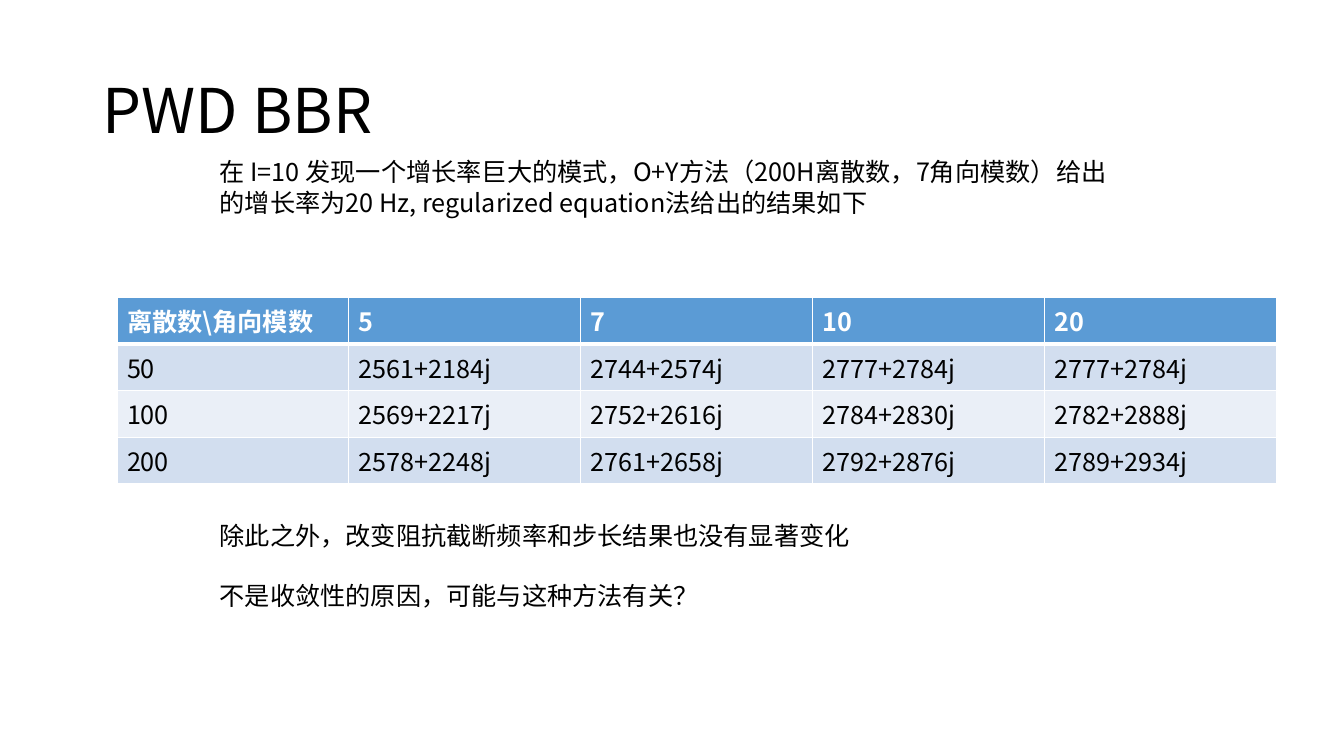
import pptx
import pptx.util
import pptx.dml.color
import pptx.enum.text
import pptx.oxml
import pptx.oxml.ns

Inches, Pt = pptx.util.Inches, pptx.util.Pt
COLORS = {"text": "000000", "light": "FFFFFF", "header": "5B9BD5",
          "odd": "D2DEEF", "even": "EAEFF7"}
FONT = "Noto Sans CJK SC"
GROWTH_RATES = [
    ["离散数\\角向模数", "5", "7", "10", "20"],
    ["50", "2561+2184j", "2744+2574j", "2777+2784j", "2777+2784j"],
    ["100", "2569+2217j", "2752+2616j", "2784+2830j", "2782+2888j"],
    ["200", "2578+2248j", "2761+2658j", "2792+2876j", "2789+2934j"],
]


def rgb(name):
    return pptx.dml.color.RGBColor.from_string(COLORS[name])


class SlideBuilder:
    """Holds the text style and the current page, and adds elements to it."""

    def __init__(self, page):
        self.page = page
        self.style = {"name": FONT, "size": Pt(18), "bold": False}

    def add_span(self, para, text, color="text", **changes):
        span = para.add_run()
        span.text = text
        for key, value in {**self.style, **changes}.items():
            setattr(span.font, key, value)
        span.font.color.rgb = rgb(color)
        east_asian = pptx.oxml.parse_xml(
            f'<a:ea {pptx.oxml.ns.nsdecls("a")} typeface="{FONT}"/>')
        span.font._element.find(pptx.oxml.ns.qn("a:latin")).addnext(east_asian)

    def place(self, shape, *bounds):
        for key, value in zip(("left", "top", "width", "height"), bounds):
            setattr(shape, key, Inches(value))

    def title(self, text, *bounds):
        box = self.page.shapes.title
        self.place(box, *bounds)
        frame = box.text_frame
        frame.auto_size = pptx.enum.text.MSO_AUTO_SIZE.NONE
        frame.vertical_anchor = pptx.enum.text.MSO_ANCHOR.MIDDLE
        para = frame.paragraphs[0]
        para.alignment = pptx.enum.text.PP_ALIGN.LEFT
        para.line_spacing = 0.9
        self.add_span(para, text, size=Pt(44))

    def text(self, lines, *bounds):
        box = self.page.shapes.add_textbox(*map(Inches, bounds))
        frame = box.text_frame
        frame.word_wrap = True
        for index, line in enumerate(lines):
            para = frame.add_paragraph() if index else frame.paragraphs[0]
            para.line_spacing = Pt(22)
            para.space_before = Pt(21 if index else 0)
            self.add_span(para, line)

    def borders(self, cell, widths):
        properties = cell._tc.get_or_add_tcPr()
        for side, width in widths.items():
            properties.append(pptx.oxml.parse_xml(
                f'<a:ln{side} {pptx.oxml.ns.nsdecls("a")} w="{int(Pt(width))}"><a:solidFill>'
                f'<a:srgbClr val="{COLORS["light"]}"/></a:solidFill></a:ln{side}>'))

    def table(self, rows, *bounds):
        grid = self.page.shapes.add_table(
            len(rows), len(rows[0]), *map(Inches, bounds)).table
        for row_index, row in enumerate(rows):
            header = row_index == 0
            fill = "header" if header else ("even", "odd")[row_index % 2]
            for column_index, value in enumerate(row):
                cell = grid.cell(row_index, column_index)
                self.borders(cell, {"L": 1, "R": 1, "T": 3 if row_index == 1 else 1,
                                    "B": 3 if header else 1})
                cell.fill.solid()
                cell.fill.fore_color.rgb = rgb(fill)
                self.add_span(cell.text_frame.paragraphs[0], value,
                              "light" if header else "text", bold=header)


def main():
    deck = pptx.Presentation()
    deck.slide_width, deck.slide_height = Inches(13.33), Inches(7.5)
    builder = SlideBuilder(deck.slides.add_slide(deck.slide_layouts[5]))
    builder.title("PWD BBR", 0.92, 0.4, 11.5, 1.45)
    builder.table(GROWTH_RATES, 1.16, 2.95, 11.5, 1.62)
    builder.text(["在 I=10 发现一个增长率巨大的模式，O+Y方法（200H离散数，7角向模数）"
                  "给出的增长率为20 Hz, regularized equation法给出的结果如下"],
                 2.08, 1.5, 9.17, 0.71)
    builder.text(["除此之外，改变阻抗截断频率和步长结果也没有显著变化",
                  "不是收敛性的原因，可能与这种方法有关？"], 2.08, 5.11, 8.39, 1.01)
    deck.save("out.pptx")


if __name__ == "__main__":
    main()
